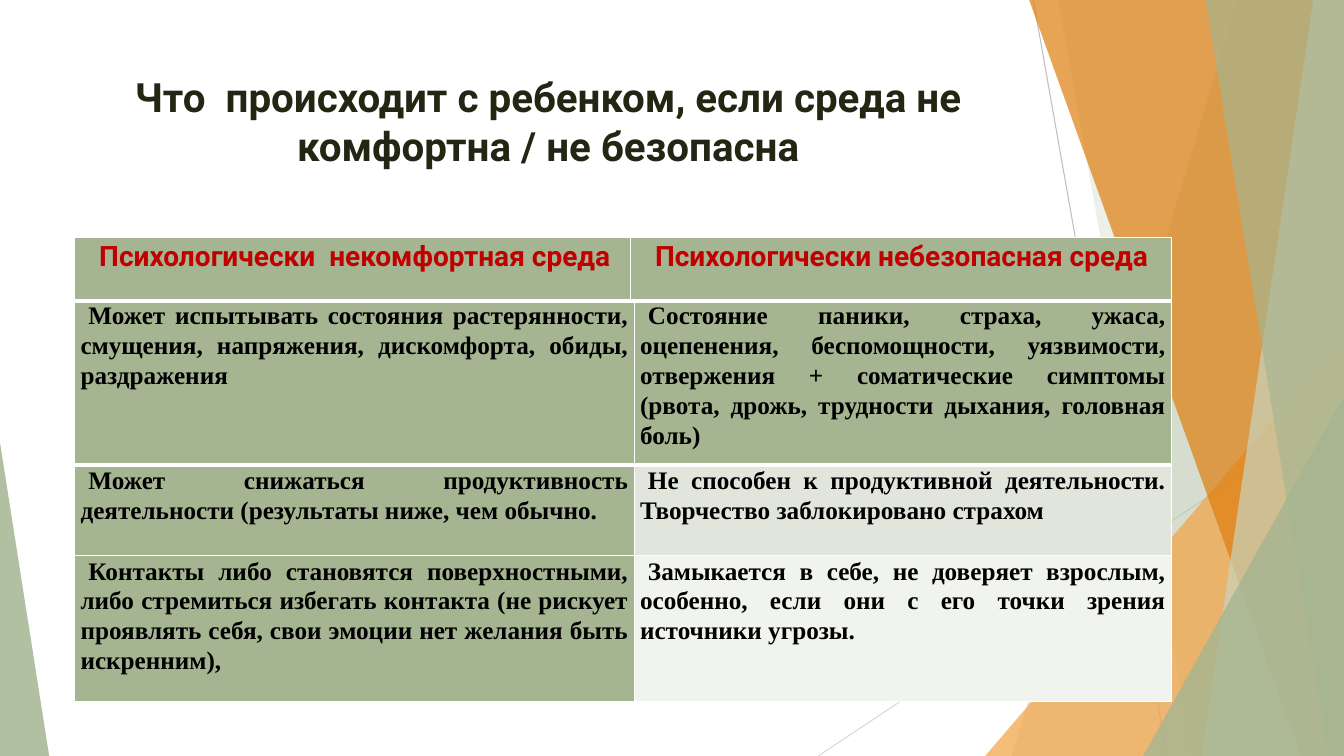
from lxml import etree
from pptx import Presentation
from pptx.dml import color as dml
from pptx.enum import shapes, text
from pptx.oxml import ns
from pptx.util import Cm, Pt

WIDTH, HEIGHT, TOP = 33.87, 19.05, -0.02
SAGE, AMBER, ORANGE, PALE = "A5B592", "F3A447", "DD7E0E", "C9D3BE"
WHITE, RED, BLACK, OLIVE = "FFFFFF", "C00000", "000000", "222613"
CENTER, JUSTIFY = text.PP_ALIGN.CENTER, text.PP_ALIGN.JUSTIFY

HEADINGS = [["Психологически  некомфортная среда", "Психологически небезопасная среда"]]
EFFECTS = [
    ["Может испытывать состояния растерянности, смущения, напряжения, дискомфорта, обиды, раздражения",
     "Состояние паники, страха, ужаса, оцепенения, беспомощности, уязвимости, отвержения + "
     "соматические симптомы (рвота, дрожь, трудности дыхания, головная боль)"],
    ["Может снижаться продуктивность деятельности (результаты ниже, чем обычно.",
     "Не способен к продуктивной деятельности. Творчество заблокировано страхом"],
    ["Контакты либо становятся поверхностными, либо стремиться избегать контакта (не рискует "
     "проявлять себя, свои эмоции нет желания быть искренним),",
     "Замыкается в себе, не доверяет взрослым, особенно, если они с его точки зрения источники угрозы."],
]


def rgb(value):
    return dml.RGBColor.from_string(value)


def write(frame, words, *, font, size, color, align, indent=0, spacing=None, after=None):
    frame.word_wrap = True
    paragraph = frame.paragraphs[0]
    paragraph.alignment = align
    paragraph.line_spacing = spacing
    paragraph.space_after = after
    if indent:
        properties = paragraph._p.get_or_add_pPr()
        properties.set("marL", "0")
        properties.set("indent", str(Cm(indent)))
    run = paragraph.add_run()
    run.text = words
    run.font.name, run.font.size, run.font.bold = font, Pt(size), True
    run.font.color.rgb = rgb(color)


# Background facets
def paint(facet, color, opacity):
    facet.shadow.inherit = False
    facet.line.fill.background()
    facet.fill.solid()
    facet.fill.fore_color.rgb = rgb(color)
    tint = facet._element.spPr.find(ns.qn("a:solidFill"))[0]
    etree.SubElement(tint, ns.qn("a:alpha"), val=str(opacity * 1000))


def add_band(group, top_x, bottom_x, color, opacity):
    """Band from a slanted left side to the slide's right edge."""
    outline = group.shapes.build_freeform(Cm(top_x), Cm(TOP))
    corners = [(WIDTH, TOP), (WIDTH, HEIGHT), (bottom_x, HEIGHT)]
    outline.add_line_segments([(Cm(x), Cm(y)) for x, y in corners])
    paint(outline.convert_to_shape(), color, opacity)


def add_corner(group, left, top, width, apex, color, opacity):
    """Triangle standing on the slide's bottom edge."""
    corner = group.shapes.add_shape(shapes.MSO_SHAPE.ISOSCELES_TRIANGLE,
                                    Cm(left), Cm(top), Cm(width), Cm(HEIGHT - top))
    corner.adjustments[0] = apex
    paint(corner, color, opacity)


def add_hairline(group, start, end, color):
    points = [Cm(value) for value in start + end]
    hairline = group.shapes.add_connector(shapes.MSO_CONNECTOR.STRAIGHT, *points)
    hairline.line.color.rgb = rgb(color)
    hairline.line.width = Pt(0.75)
    etree.SubElement(hairline._element.spPr, ns.qn("a:effectLst"))


def add_facets(slide):
    group = slide.shapes.add_group_shape()
    add_hairline(group, (26.04, 0), (29.41, HEIGHT), "BFBFBF")
    add_hairline(group, (WIDTH, 10.24), (20.62, HEIGHT), "D9D9D9")
    add_band(group, 31.19, 25.5, SAGE, 30)
    add_band(group, 26.67, 30.05, SAGE, 20)
    add_corner(group, 24.83, 8.46, 9.04, 1, AMBER, 72)
    add_band(group, 25.93, 32.79, ORANGE, 70)
    add_band(group, 33.1, 30.28, PALE, 70)
    add_band(group, 30.38, 33.48, SAGE, 65)
    add_corner(group, 28.81, 9.98, 5.06, 1, SAGE, 80)
    add_corner(group, 0, 11.15, 1.24, 0, SAGE, 85)


# Tables
def add_border(cell, side, width):
    border = etree.SubElement(cell._tc.get_or_add_tcPr(), ns.qn("a:ln" + side), w=str(Pt(width)))
    solid = etree.SubElement(border, ns.qn("a:solidFill"))
    etree.SubElement(solid, ns.qn("a:srgbClr"), val=WHITE)


def add_grid(slide, top, widths, heights, rows, fills, indents, **style):
    """White-ruled table with a thick line below its first row."""
    grid = slide.shapes.add_table(len(rows), len(widths), Cm(1.88), Cm(top),
                                  Cm(sum(widths)), Cm(sum(heights))).table
    grid.first_row = grid.horz_banding = False
    for column, width in zip(grid.columns, widths):
        column.width = Cm(width)
    for r, row in enumerate(rows):
        grid.rows[r].height = Cm(heights[r])
        for c, words in enumerate(row):
            cell = grid.cell(r, c)
            cell.margin_left = cell.margin_right = Cm(0.15)
            cell.margin_top = cell.margin_bottom = 0
            add_border(cell, "L", 1)
            add_border(cell, "R", 1)
            if r == 0:
                add_border(cell, "T", 1)
            add_border(cell, "B", 3 if r == 0 else 1)
            cell.fill.solid()
            cell.fill.fore_color.rgb = rgb(fills[r][c])
            write(cell.text_frame, words, indent=indents[c], spacing=1.07, after=Pt(8), **style)


def add_title(slide):
    title = slide.shapes.title
    title.left, title.top, title.width, title.height = Cm(1.88), Cm(1.7), Cm(23.88), Cm(3.66)
    title.text_frame.vertical_anchor = text.MSO_ANCHOR.TOP
    title.text_frame.auto_size = text.MSO_AUTO_SIZE.NONE
    write(title.text_frame, "Что  происходит с ребенком, если среда не комфортна / не безопасна",
          font="Roboto", size=28.8, color=OLIVE, align=CENTER)


def main():
    deck = Presentation()
    deck.slide_width, deck.slide_height = Cm(WIDTH), Cm(HEIGHT)
    slide = deck.slides.add_slide(deck.slide_layouts[5])
    add_facets(slide)
    add_title(slide)
    add_grid(slide, 7.57, [14.1, 13.54], [4.14, 2.29, 3.68], EFFECTS,
             [[SAGE, SAGE], [SAGE, "E1E5DC"], [SAGE, "F0F3EE"]], [0.2, 0.2],
             font="Times New Roman", size=18, color=BLACK, align=JUSTIFY)
    add_grid(slide, 5.99, [14, 13.64], [1.6], HEADINGS, [[SAGE, SAGE]], [0.13, 0.05],
             font="Roboto", size=20, color=RED, align=CENTER)
    deck.save("out.pptx")


if __name__ == "__main__":
    main()
